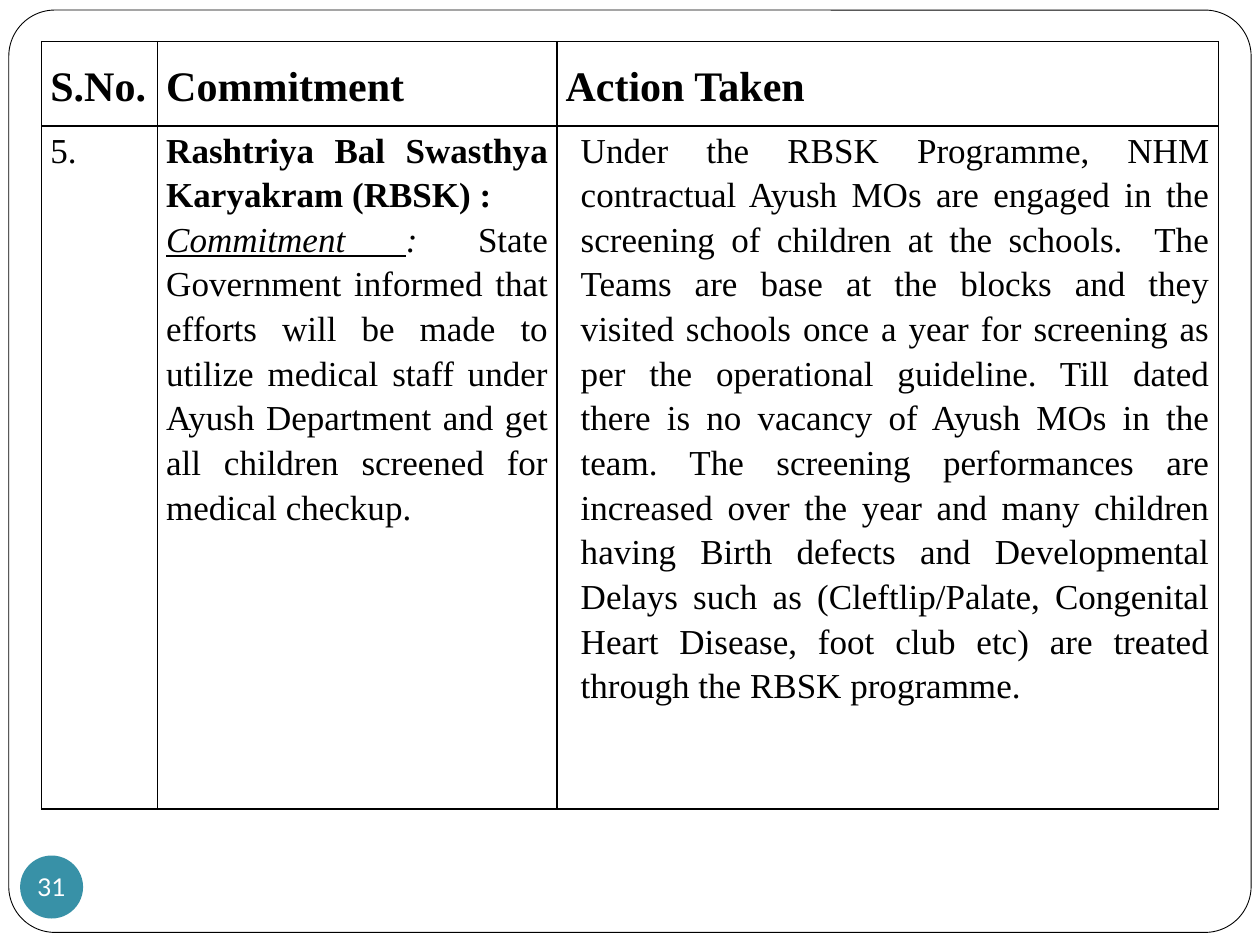
from dataclasses import dataclass

from lxml import etree
from pptx import Presentation
from pptx import util as u
from pptx.dml.color import RGBColor
from pptx.enum import shapes, text
from pptx.oxml import ns

SLIDE_WIDTH, SLIDE_HEIGHT = 10, 7.5
TABLE_LEFT = TABLE_TOP = 0.33
COLUMN_WIDTHS = (0.92, 3.17, 5.25)
ROW_HEIGHTS = (0.67, 5.42)
BLACK, WHITE, TEAL = "000000", "FFFFFF", "3891A7"


@dataclass(frozen=True)
class Run:
    text: str
    bold: bool = False
    italic: bool = False
    underline: bool = False


@dataclass(frozen=True)
class Entry:
    """One table cell: its paragraphs, each a tuple of runs."""
    paragraphs: tuple[tuple[Run, ...], ...]
    size: int = 20
    indent: float = 0
    anchor: text.MSO_ANCHOR = text.MSO_ANCHOR.TOP


def heading(title: str) -> Entry:
    return Entry(((Run(title, bold=True),),), size=24, anchor=text.MSO_ANCHOR.MIDDLE)


ROWS = (
    (heading("S.No."), heading("Commitment"), heading("Action Taken")),
    (
        Entry(((Run("5."),),)),
        Entry((
            (Run("Rashtriya Bal Swasthya Karyakram (RBSK) :", bold=True),),
            (
                Run("Commitment ", italic=True, underline=True),
                Run(": ", italic=True),
                Run("State Government informed that efforts will be made to utilize "
                    "medical staff under Ayush Department and get all children "
                    "screened for medical checkup."),
            ),
        )),
        Entry(((Run(
            "Under the RBSK Programme, NHM contractual Ayush MOs are engaged in the "
            "screening of children at the schools.  The Teams are base at the blocks "
            "and they visited schools once a year for screening as per the operational "
            "guideline. Till dated there is no vacancy of Ayush MOs in the team. The "
            "screening performances are increased over the year and many children "
            "having Birth defects and Developmental Delays such as (Cleftlip/Palate, "
            "Congenital Heart Disease, foot club etc) are treated through the RBSK "
            "programme."),),), indent=0.12),
    ),
)


def color(value: str) -> RGBColor:
    return RGBColor.from_string(value)


def add_filled_shape(slide, kind, left: float, top: float, width: float,
                     height: float, fill: str):
    shape = slide.shapes.add_shape(
        kind, u.Inches(left), u.Inches(top), u.Inches(width), u.Inches(height))
    shape.shadow.inherit = False
    shape.fill.solid()
    shape.fill.fore_color.rgb = color(fill)
    return shape


def add_frame(slide) -> None:
    frame = add_filled_shape(slide, shapes.MSO_SHAPE.ROUNDED_RECTANGLE,
                             0.07, 0.08, 9.86, 7.32, WHITE)
    frame.adjustments[0] = 0.05
    frame.line.color.rgb = color(BLACK)
    frame.line.width = u.Pt(0.5)


def add_page_number(slide, number: str) -> None:
    badge = add_filled_shape(slide, shapes.MSO_SHAPE.OVAL, 0.16, 6.79, 0.5, 0.5, TEAL)
    badge.line.fill.background()
    frame = badge.text_frame
    frame.margin_left = frame.margin_right = frame.margin_top = frame.margin_bottom = 0
    frame.word_wrap = False
    frame.vertical_anchor = text.MSO_ANCHOR.MIDDLE
    paragraph = frame.paragraphs[0]
    paragraph.text = number
    paragraph.alignment = text.PP_ALIGN.CENTER
    paragraph.font.name = "Lato"
    paragraph.font.size = u.Pt(14)
    paragraph.font.color.rgb = color(WHITE)


def add_borders(cell, line_color: str, width: float) -> None:
    properties = cell._tc.get_or_add_tcPr()
    for position, side in enumerate(("lnL", "lnR", "lnT", "lnB")):
        line = etree.Element(ns.qn(f"a:{side}"), w=str(u.Pt(width)))
        fill = etree.SubElement(line, ns.qn("a:solidFill"))
        etree.SubElement(fill, ns.qn("a:srgbClr"), val=line_color)
        properties.insert(position, line)


def write_paragraph(paragraph, runs: tuple[Run, ...], entry: Entry) -> None:
    paragraph.alignment = text.PP_ALIGN.JUSTIFY
    paragraph.line_spacing = 1.15
    if entry.indent:
        properties = paragraph._p.get_or_add_pPr()
        properties.set("marL", str(u.Inches(entry.indent)))
        properties.set("indent", "0")
    paragraph.font.name = "Times New Roman"
    paragraph.font.size = u.Pt(entry.size)
    paragraph.font.color.rgb = color(BLACK)
    for item in runs:
        run = paragraph.add_run()
        run.text = item.text
        run.font.bold = item.bold
        run.font.italic = item.italic
        run.font.underline = item.underline


def fill_cell(cell, entry: Entry) -> None:
    cell.fill.background()
    cell.margin_left = cell.margin_right = u.Inches(0.07)
    cell.margin_top = cell.margin_bottom = 0
    cell.vertical_anchor = entry.anchor
    add_borders(cell, BLACK, 1)
    frame = cell.text_frame
    for index, runs in enumerate(entry.paragraphs):
        paragraph = frame.add_paragraph() if index else frame.paragraphs[0]
        write_paragraph(paragraph, runs, entry)


def add_commitment_table(slide) -> None:
    table = slide.shapes.add_table(
        len(ROW_HEIGHTS), len(COLUMN_WIDTHS), u.Inches(TABLE_LEFT), u.Inches(TABLE_TOP),
        u.Inches(sum(COLUMN_WIDTHS)), u.Inches(sum(ROW_HEIGHTS))).table
    table.first_row = table.horz_banding = False
    for column, width in zip(table.columns, COLUMN_WIDTHS):
        column.width = u.Inches(width)
    for row, height, entries in zip(table.rows, ROW_HEIGHTS, ROWS):
        row.height = u.Inches(height)
        for cell, entry in zip(row.cells, entries):
            fill_cell(cell, entry)


def main() -> None:
    presentation = Presentation()
    presentation.slide_width = u.Inches(SLIDE_WIDTH)
    presentation.slide_height = u.Inches(SLIDE_HEIGHT)
    slide = presentation.slides.add_slide(presentation.slide_layouts[6])
    add_frame(slide)
    add_page_number(slide, "31")
    add_commitment_table(slide)
    presentation.save("out.pptx")


if __name__ == "__main__":
    main()
